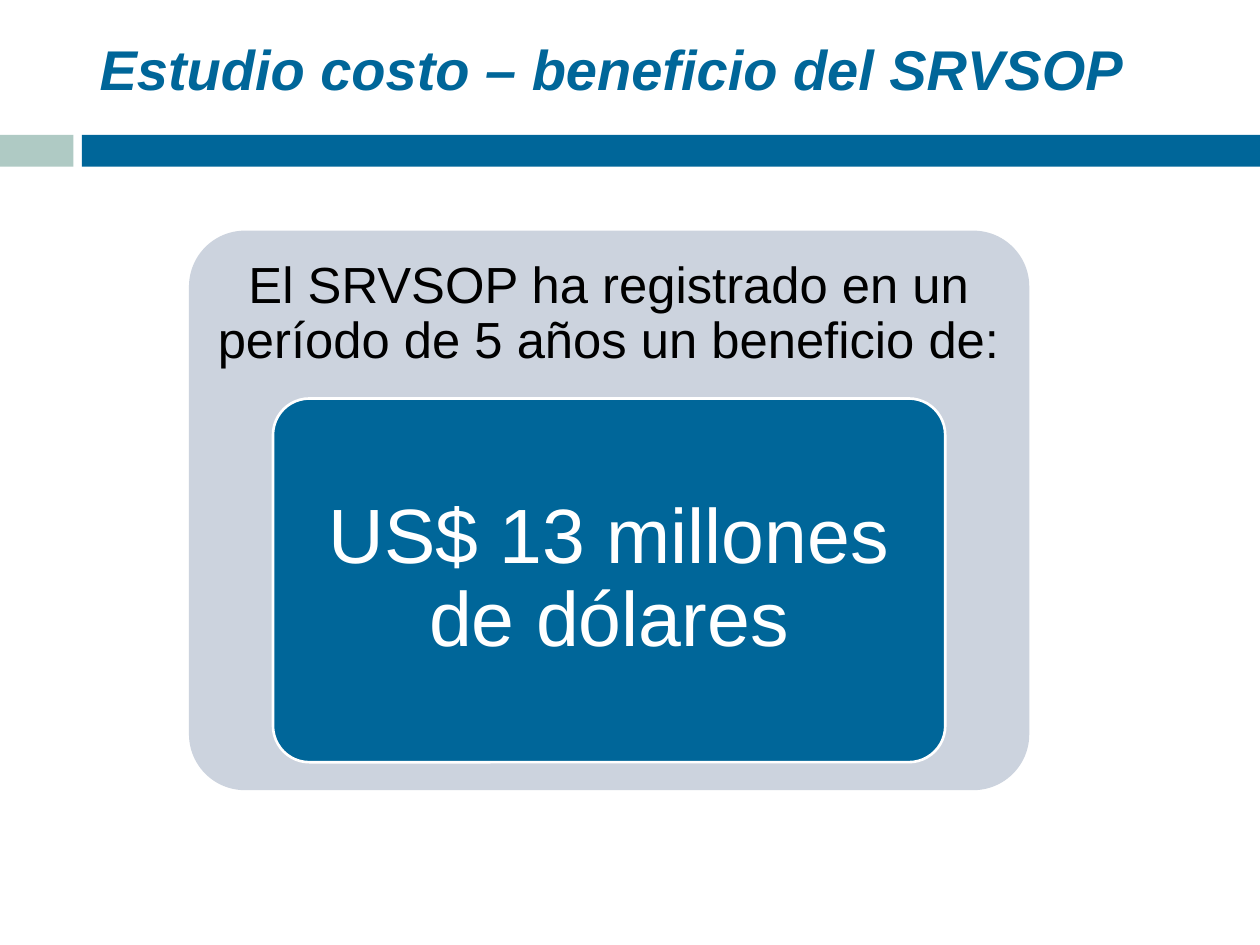
from pptx import Presentation
from pptx.dml.color import RGBColor as Rgb
from pptx.enum.shapes import MSO_SHAPE as Shape
from pptx.enum.text import MSO_ANCHOR as Anchor, MSO_AUTO_SIZE as AutoSize, PP_ALIGN as Align
from pptx.util import Cm, Pt

COLORS = {"blue": "006699", "mint": "AFCAC4", "gray": "CCD3DE", "white": "FFFFFF", "black": "000000"}
FONT = "Arial"


def write_text(frame, text, *, size, color, bold=False, italic=False, spacing=1.0, insets=(0.25, 0.13, 0.25, 0.13)):
    frame.word_wrap = True
    frame.auto_size = AutoSize.NONE
    frame.vertical_anchor = Anchor.MIDDLE
    frame.margin_left, frame.margin_top, frame.margin_right, frame.margin_bottom = map(Cm, insets)
    para = frame.paragraphs[0]
    para.alignment = Align.CENTER
    para.line_spacing = spacing
    span = para.add_run()
    span.text = text
    font = span.font
    font.name, font.size, font.bold, font.italic = FONT, Pt(size), bold, italic
    font.color.rgb = Rgb.from_string(COLORS[color])


class SlideBuilder:
    """Hold the style and the current slide, and add its elements."""

    def __init__(self, deck):
        self.page = deck.slides.add_slide(deck.slide_layouts[5])

    def title(self, text, area, **style):
        box = self.page.shapes.title
        box.left, box.top, box.width, box.height = map(Cm, area)
        write_text(box.text_frame, text, **style)

    def block(self, kind, area, fill, line=None, corner=None):
        box = self.page.shapes.add_shape(kind, *map(Cm, area))
        box.shadow.inherit = False
        box.fill.solid()
        box.fill.fore_color.rgb = Rgb.from_string(COLORS[fill])
        if line:
            box.line.color.rgb = Rgb.from_string(COLORS[line])
            box.line.width = Pt(1.5)
        else:
            box.line.fill.background()
        if corner is not None:
            box.adjustments[0] = corner
        return box

    def label(self, text, area, **style):
        box = self.page.shapes.add_textbox(*map(Cm, area))
        write_text(box.text_frame, text, **style)


def main():
    deck = Presentation()
    deck.slide_width, deck.slide_height = Cm(25.4), Cm(19.05)
    builder = SlideBuilder(deck)

    builder.block(Shape.RECTANGLE, (0, 2.72, 1.48, 0.64), "mint")
    builder.block(Shape.RECTANGLE, (1.65, 2.72, 23.75, 0.64), "blue")
    builder.title("Estudio costo – beneficio del SRVSOP", (0.69, 0.53, 23.9, 1.68),
                  size=32, color="blue", bold=True, italic=True, insets=(0.25, 0.13, 0.85, 0.13))

    left, top, width, height = 3.81, 4.65, 16.94, 11.28
    heading = 0.3 * height
    margin = 0.1 * width
    builder.block(Shape.ROUNDED_RECTANGLE, (left, top, width, height), "gray", corner=0.1)
    builder.label("El SRVSOP ha registrado en un período de 5 años un beneficio de:",
                  (left, top, width, heading), size=29, color="black", spacing=0.9,
                  insets=(0.3, 0.3, 0.3, 0.3))
    amount = builder.block(Shape.ROUNDED_RECTANGLE,
                           (left + margin, top + heading, width - 2 * margin, 0.65 * height),
                           "blue", line="white", corner=0.1)
    write_text(amount.text_frame, "US$ 13 millones de dólares", size=44, color="white",
               spacing=0.9, insets=(0.3, 0.23, 0.3, 0.23))

    deck.save("out.pptx")


if __name__ == "__main__":
    main()
